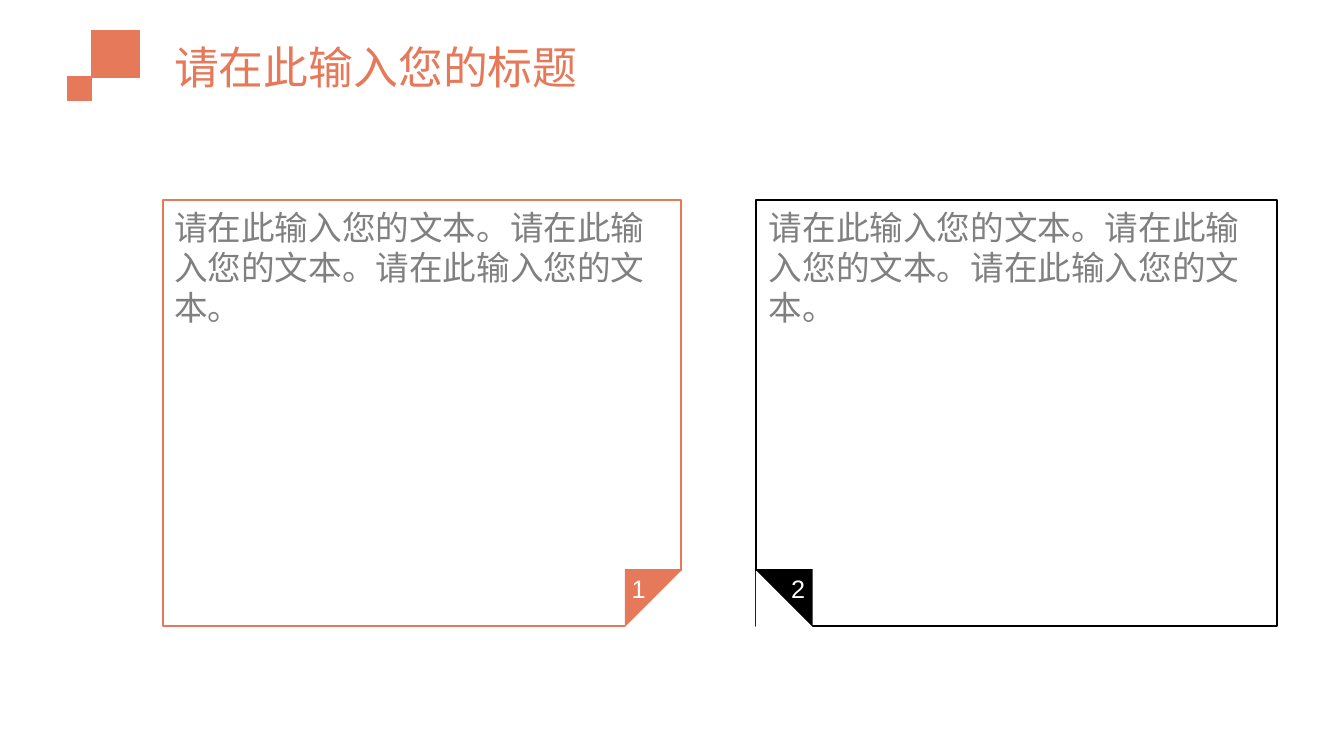
"""Build a slide with a title and two numbered cards with folded corners."""
import dataclasses

import pptx
import pptx.dml.color
import pptx.enum.shapes
import pptx.enum.text
import pptx.shapes.autoshape
import pptx.slide
import pptx.util
from pptx.util import Cm

MSO = pptx.enum.shapes.MSO_SHAPE
ANCHOR = pptx.enum.text.MSO_ANCHOR
ORANGE, BLACK, WHITE, GRAY = "E6795A", "000000", "FFFFFF", "808080"
BODY = "请在此输入您的文本。" * 3
FOLD = 1.42
CARD_TOP, CARD_HEIGHT = 5.05, 10.72


@dataclasses.dataclass
class Box:
    x: float
    y: float
    w: float
    h: float

    def lengths(self) -> tuple[Cm, Cm, Cm, Cm]:
        return Cm(self.x), Cm(self.y), Cm(self.w), Cm(self.h)


@dataclasses.dataclass
class Card:
    number: str
    color: str
    x: float
    width: float
    text_x: float
    fold_x: float
    number_x: float
    rotation: int


def rgb(color: str) -> pptx.dml.color.RGBColor:
    return pptx.dml.color.RGBColor.from_string(color)


def add_shape(s: pptx.slide.Slide, kind: MSO, box: Box, fill: str = "",
              line: str = "", width: float = 0.75) -> pptx.shapes.autoshape.Shape:
    sp = s.shapes.add_shape(kind, *box.lengths())
    sp.shadow.inherit = False
    if fill:
        sp.fill.solid()
        sp.fill.fore_color.rgb = rgb(fill)
    else:
        sp.fill.background()
    if line:
        sp.line.color.rgb = rgb(line)
        sp.line.width = pptx.util.Pt(width)
    else:
        sp.line.fill.background()
    return sp


def add_text(s: pptx.slide.Slide, text: str, box: Box, size: int, color: str,
             anchor: ANCHOR = ANCHOR.MIDDLE) -> None:
    tf = s.shapes.add_textbox(*box.lengths()).text_frame
    tf.word_wrap = True
    tf.vertical_anchor = anchor
    tf.text = text
    r = tf.paragraphs[0].runs[0]
    r.font.name = "Arial"
    r.font.size = pptx.util.Pt(size)
    r.font.color.rgb = rgb(color)


def add_card(s: pptx.slide.Slide, card: Card) -> None:
    add_text(s, BODY, Box(card.text_x, 5.08, 13.03, 10.67), 24, GRAY, ANCHOR.TOP)
    add_shape(s, MSO.RECTANGLE, Box(card.x, CARD_TOP, card.width, CARD_HEIGHT),
              line=card.color, width=1.5)
    add_shape(s, MSO.RECTANGLE, Box(card.fold_x, 14.34, FOLD, FOLD), card.color)
    add_text(s, card.number, Box(card.number_x, 14.33, 0.87, 1.02), 18, WHITE)
    corner = add_shape(s, MSO.RIGHT_TRIANGLE, Box(card.fold_x, 14.4, FOLD, FOLD),
                       WHITE, WHITE)
    corner.rotation = card.rotation


def main() -> None:
    prs = pptx.Presentation()
    prs.slide_width, prs.slide_height = Cm(33.87), Cm(19.05)
    s = prs.slides.add_slide(prs.slide_layouts[6])
    for square in (Box(2.31, 0.76, 1.2, 1.2), Box(1.7, 1.93, 0.61, 0.61)):
        add_shape(s, MSO.RECTANGLE, square, ORANGE, ORANGE)
    add_text(s, "请在此输入您的标题", Box(4.14, 0.53, 28.04, 2.31), 32, ORANGE)
    for card in (
        Card("1", ORANGE, 4.11, 13.06, 4.14, 15.75, 15.67, 270),
        Card("2", BLACK, 19.05, 13.13, 19.13, 19.06, 19.69, 0),
    ):
        add_card(s, card)
    prs.save("out.pptx")


if __name__ == "__main__":
    main()
